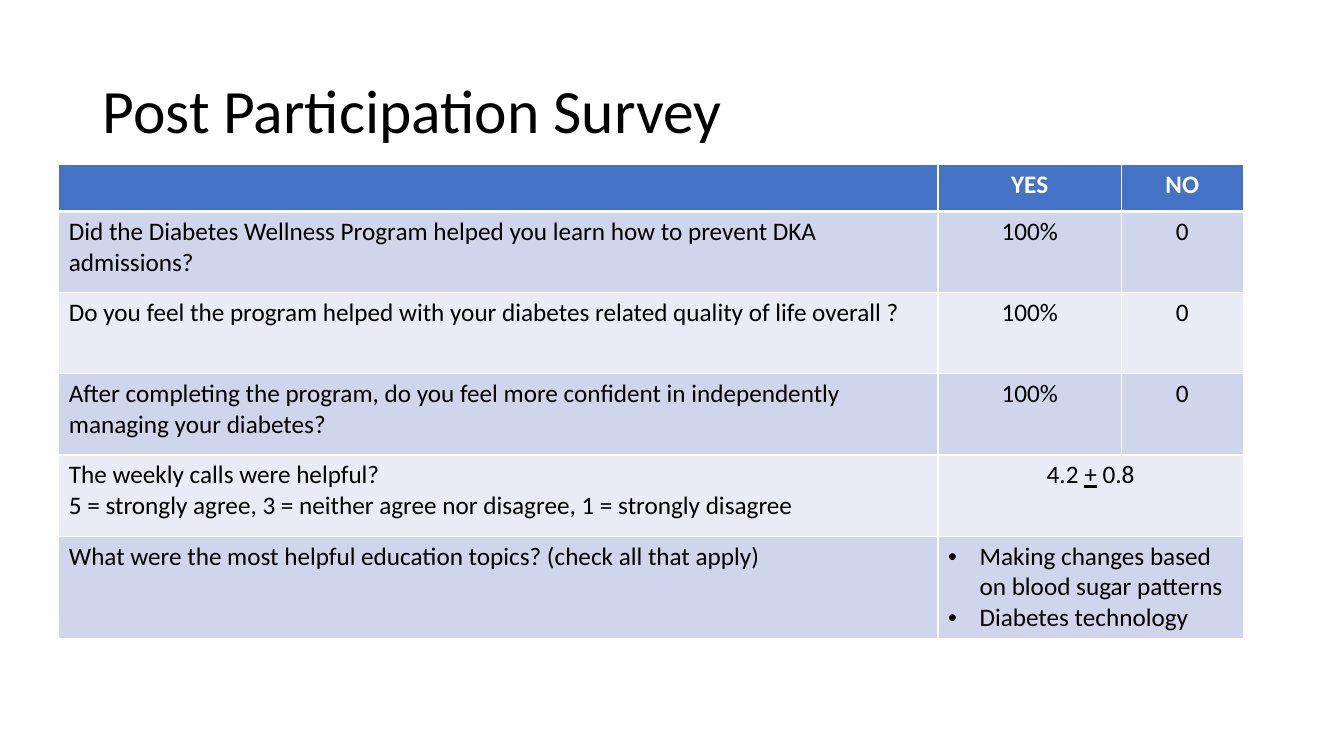
from lxml import etree
from pptx import Presentation
from pptx.dml.color import RGBColor
from pptx.enum import text
from pptx.oxml import ns
from pptx.util import Pt

WHITE = RGBColor(0xFF, 0xFF, 0xFF)
BLACK = RGBColor(0x00, 0x00, 0x00)
HEADER_BLUE = RGBColor(0x44, 0x72, 0xC4)
BANDS = (RGBColor(0xCF, 0xD5, 0xEA), RGBColor(0xE9, 0xEB, 0xF5))

COLUMN_WIDTHS = (628, 131, 87)
ROW_HEIGHTS = (33.5, 58, 58, 58, 58, 73)

# A cell is a list of paragraphs; None continues the cell to its left.
SURVEY = [
    [[""], ["YES"], ["NO"]],
    [["Did the Diabetes Wellness Program helped you learn how to prevent DKA admissions?"],
     ["100%"], ["0"]],
    [["Do you feel the program helped with your diabetes related quality of life overall ?"],
     ["100%"], ["0"]],
    [["After completing the program, do you feel more confident in independently "
      "managing your diabetes?"], ["100%"], ["0"]],
    [["The weekly calls were helpful?",
      "5 = strongly agree, 3 = neither agree nor disagree, 1 = strongly disagree"],
     ["4.2 + 0.8"], None],
    [["What were the most helpful education topics? (check all that apply)"],
     ["Making changes based on blood sugar patterns", "Diabetes technology"], None],
]


class SurveySlide:
    font_name = "Calibri"
    title_size = 44
    table_size = 18
    bullet_indent = 22.5

    def __init__(self, presentation):
        self.slide = presentation.slides.add_slide(presentation.slide_layouts[5])

    def set_font(self, paragraph, size, color, bold=False):
        font = paragraph.font
        font.name, font.size, font.bold = self.font_name, Pt(size), bold
        font.color.rgb = color

    def add_title(self, wording, left, top, width, height):
        title = self.slide.shapes.title
        title.left, title.top, title.width, title.height = map(Pt, (left, top, width, height))
        frame = title.text_frame
        frame.text = wording
        frame.auto_size = text.MSO_AUTO_SIZE.NONE
        frame.vertical_anchor = text.MSO_ANCHOR.MIDDLE
        paragraph = frame.paragraphs[0]
        paragraph.alignment = text.PP_ALIGN.LEFT
        paragraph.line_spacing = 0.9
        self.set_font(paragraph, self.title_size, BLACK)

    def add_table(self, rows, left, top):
        table = self.slide.shapes.add_table(
            len(rows), len(COLUMN_WIDTHS), Pt(left), Pt(top),
            Pt(sum(COLUMN_WIDTHS)), Pt(sum(ROW_HEIGHTS))).table
        for column, width in zip(table.columns, COLUMN_WIDTHS):
            column.width = Pt(width)
        for row, height in zip(table.rows, ROW_HEIGHTS):
            row.height = Pt(height)
        for row_index, row in enumerate(rows):
            for column_index, lines in enumerate(row):
                cell = table.cell(row_index, column_index)
                self.format_cell(cell, row_index)
                if lines is None:
                    table.cell(row_index, column_index - 1).merge(cell)
                else:
                    self.fill_cell(cell, lines, row_index == 0, column_index > 0)

    def format_cell(self, cell, row_index):
        cell.fill.solid()
        cell.fill.fore_color.rgb = BANDS[(row_index - 1) % 2] if row_index else HEADER_BLUE
        thick_edge = {0: "lnB", 1: "lnT"}.get(row_index)
        properties = cell._tc.get_or_add_tcPr()
        for position, edge in enumerate(("lnL", "lnR", "lnT", "lnB")):
            line = etree.Element(ns.qn("a:" + edge), w=str(Pt(3 if edge == thick_edge else 1)))
            fill = etree.SubElement(line, ns.qn("a:solidFill"))
            etree.SubElement(fill, ns.qn("a:srgbClr"), val=str(WHITE))
            properties.insert(position, line)

    def fill_cell(self, cell, lines, is_header, is_answer):
        frame = cell.text_frame
        for index, line in enumerate(lines):
            paragraph = frame.add_paragraph() if index else frame.paragraphs[0]
            self.set_font(paragraph, self.table_size, WHITE if is_header else BLACK, is_header)
            before, plus, after = line.partition("+")
            for part in filter(None, (before, plus, after)):
                run = paragraph.add_run()
                run.text = part
                if part == "+":
                    run.font.underline = True
            if is_answer and len(lines) > 1:
                self.add_bullet(paragraph)
            elif is_answer:
                paragraph.alignment = text.PP_ALIGN.CENTER

    def add_bullet(self, paragraph):
        properties = paragraph._p.get_or_add_pPr()
        properties.set("marL", str(Pt(self.bullet_indent)))
        properties.set("indent", str(-Pt(self.bullet_indent)))
        bullet_font = etree.Element(ns.qn("a:buFont"), typeface="Arial")
        bullet = etree.Element(ns.qn("a:buChar"), char="•")
        properties.insert(0, bullet_font)
        properties.insert(1, bullet)


def main():
    presentation = Presentation()
    presentation.slide_width, presentation.slide_height = Pt(960), Pt(540)
    survey = SurveySlide(presentation)
    survey.add_title("Post Participation Survey", 66, 28.75, 828, 104.4)
    survey.add_table(SURVEY, 42, 117.5)
    presentation.save("out.pptx")


if __name__ == "__main__":
    main()
